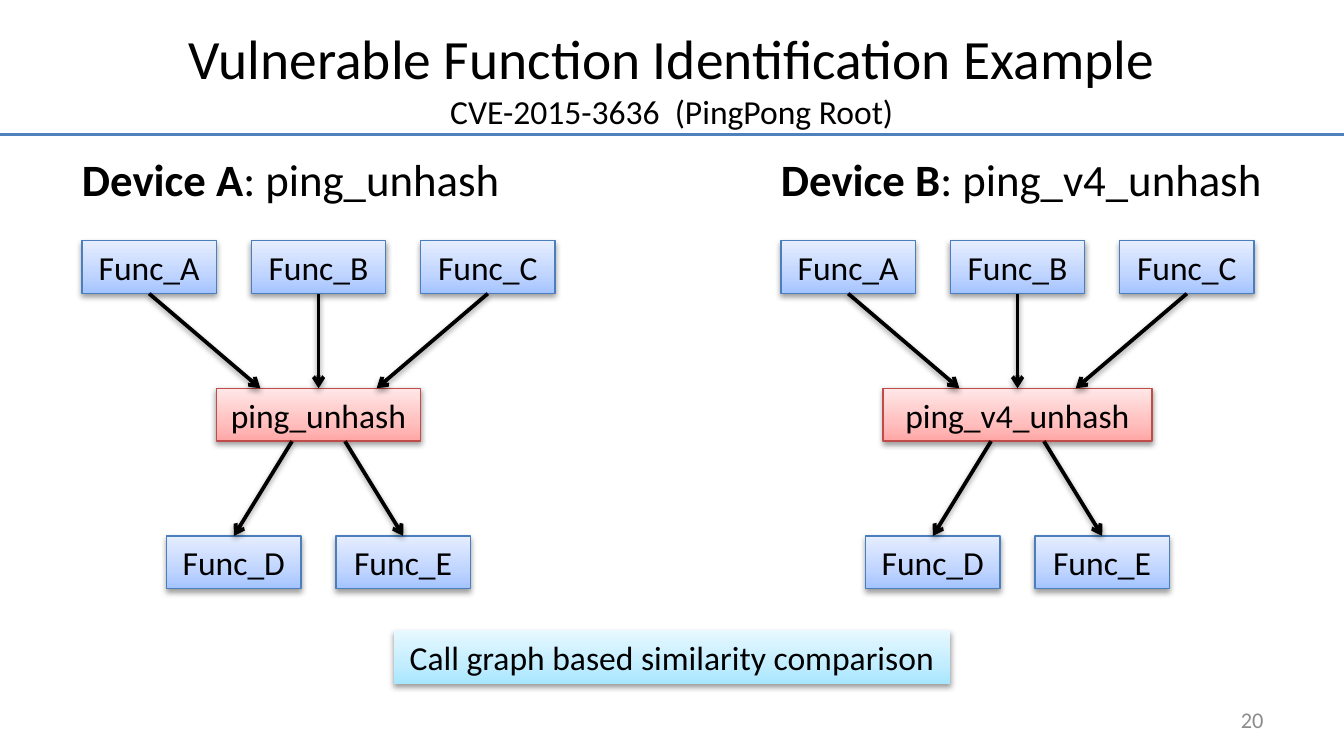
from copy import deepcopy

from lxml.etree import SubElement
from pptx import Presentation
from pptx.dml.color import RGBColor
from pptx.enum.shapes import MSO_CONNECTOR as Connector, MSO_SHAPE as Shape
from pptx.enum.text import MSO_ANCHOR as Anchor, PP_ALIGN as Align
from pptx.oxml.ns import qn
from pptx.util import Cm, Pt

FONT = "Calibri"
BLUE = ("A4C4FF", "BFD4FF", "E6EEFF")
RED = ("FFA6A5", "FFC0BF", "FFE7E7")
CYAN = ("A7E6FF", "C1EDFF", "E7F8FF")
STOPS = (0, 0.35, 1)
BOX_WIDTH, BOX_HEIGHT = 2.54, 1
CALLER_TOP, TARGET_TOP, CALLEE_TOP = 4.55, 7.34, 10.13
CALLERS = (("Func_A", -1), ("Func_B", 0), ("Func_C", 1))
CALLEES = (("Func_D", -1), ("Func_E", 1))
COLUMN_PITCH = 3.2
TOP, BOTTOM = 0, 2


def color(value):
    """Turn a hex string into a colour."""
    return RGBColor.from_string(value)


def set_effects(shape, shadow=True):
    """Give a shape a soft shadow below it, or no effect at all."""
    effects = SubElement(shape._element.spPr, qn("a:effectLst"))
    if shadow:
        outer = SubElement(effects, qn("a:outerShdw"), blurRad="40000",
                           dist="20000", dir="5400000", rotWithShape="0")
        black = SubElement(outer, qn("a:srgbClr"), val="000000")
        SubElement(black, qn("a:alpha"), val="38000")


def style_font(font, size, value="000000"):
    """Set typeface, size and colour."""
    font.name = FONT
    font.size = Pt(size)
    font.color.rgb = color(value)


def add_text(slide, left, top, width, height, spans, align=Align.LEFT,
             anchor=Anchor.TOP, value="000000"):
    """Add a one-paragraph text box from (text, size, bold) spans."""
    box = slide.shapes.add_textbox(Cm(left), Cm(top), Cm(width), Cm(height))
    box.text_frame.word_wrap = True
    box.text_frame.vertical_anchor = anchor
    para = box.text_frame.paragraphs[0]
    para.alignment = align
    for text, size, bold in spans:
        if text == "\n":
            para.add_line_break()
            continue
        span = para.add_run()
        span.text = text
        span.font.bold = bold
        style_font(span.font, size, value)


def add_box(shapes, text, center, top, width, gradient, outline=None,
            height=BOX_HEIGHT):
    """Add a shaded rectangle with a centred label."""
    box = shapes.add_shape(Shape.RECTANGLE, Cm(center - width / 2), Cm(top),
                           Cm(width), Cm(height))
    box.fill.gradient()
    box.fill.gradient_angle = 90
    first = box._element.spPr.find(".//" + qn("a:gs"))
    first.addnext(deepcopy(first))
    for stop, position, value in zip(box.fill.gradient_stops, STOPS, gradient):
        stop.position = position
        stop.color.rgb = color(value)
    if outline:
        box.line.color.rgb = color(outline)
        box.line.width = Pt(0.75)
    else:
        box.line.fill.background()
    set_effects(box)
    frame = box.text_frame
    frame.word_wrap = False
    frame.vertical_anchor = Anchor.MIDDLE
    para = frame.paragraphs[0]
    para.text = text
    para.alignment = Align.CENTER
    style_font(para.font, 18)
    return box


def add_line(shapes, start, end, value):
    """Add a straight line between two (x, y) points."""
    line = shapes.add_connector(Connector.STRAIGHT,
                                *(Cm(length) for length in start + end))
    line.line.color.rgb = color(value)
    line.line.width = Pt(2)
    return line


def add_arrow(shapes, start, end):
    """Add a black call arrow with a shadow."""
    arrow = add_line(shapes, start, end, "000000")
    SubElement(arrow.line._get_or_add_ln(), qn("a:tailEnd"), type="arrow")
    set_effects(arrow)
    return arrow


def add_call_graph(slide, device, function, center, target_width):
    """Add a device heading and the callers and callees of its function."""
    add_text(slide, center - 4.72, 2.74, 10, 1.4,
             [(device, 24, True), (f": {function}", 24, False)])
    shapes = slide.shapes.add_group_shape().shapes
    target = add_box(shapes, function, center, TARGET_TOP, target_width,
                     RED, "BF4C48")
    for name, side in CALLERS:
        middle = center + side * COLUMN_PITCH
        caller = add_box(shapes, name, middle, CALLER_TOP, BOX_WIDTH,
                         BLUE, "4B7EBC")
        arrow = add_arrow(shapes, (middle, CALLER_TOP + BOX_HEIGHT),
                          (center + side * 1.1, TARGET_TOP))
        arrow.begin_connect(caller, BOTTOM)
        if side == 0:
            arrow.end_connect(target, TOP)
    for name, side in CALLEES:
        middle = center + side * COLUMN_PITCH / 2
        callee = add_box(shapes, name, middle, CALLEE_TOP, BOX_WIDTH,
                         BLUE, "4B7EBC")
        arrow = add_arrow(shapes, (center + side * 0.5, TARGET_TOP + BOX_HEIGHT),
                          (middle, CALLEE_TOP))
        arrow.end_connect(callee, TOP)


def main():
    """Build the slide and save it."""
    deck = Presentation()
    deck.slide_width, deck.slide_height = Cm(25.4), Cm(14.29)
    slide = deck.slides.add_slide(deck.slide_layouts[6])
    rule = add_line(slide.shapes, (0, 2.54), (25.4, 2.54), "4F81BD")
    set_effects(rule, shadow=False)
    add_text(slide, 1.27, 0.36, 22.86, 2.21,
             [("Vulnerable Function Identification Example", 29.7, False),
              ("\n", 18, False),
              ("CVE-2015-3636  (PingPong Root)", 18, False)],
             Align.CENTER, Anchor.MIDDLE)
    add_call_graph(slide, "Device A", "ping_unhash", 6.02, 3.86)
    add_call_graph(slide, "Device B", "ping_v4_unhash", 19.23, 5.08)
    add_text(slide, 18.21, 13.23, 5.92, 0.76, [("20", 12, False)],
             Align.RIGHT, Anchor.MIDDLE, "8C8C8C")
    add_box(slide.shapes, "Call graph based similarity comparison", 12.7,
            11.91, 10.52, CYAN, height=1.02)
    deck.save("out.pptx")


if __name__ == "__main__":
    main()
